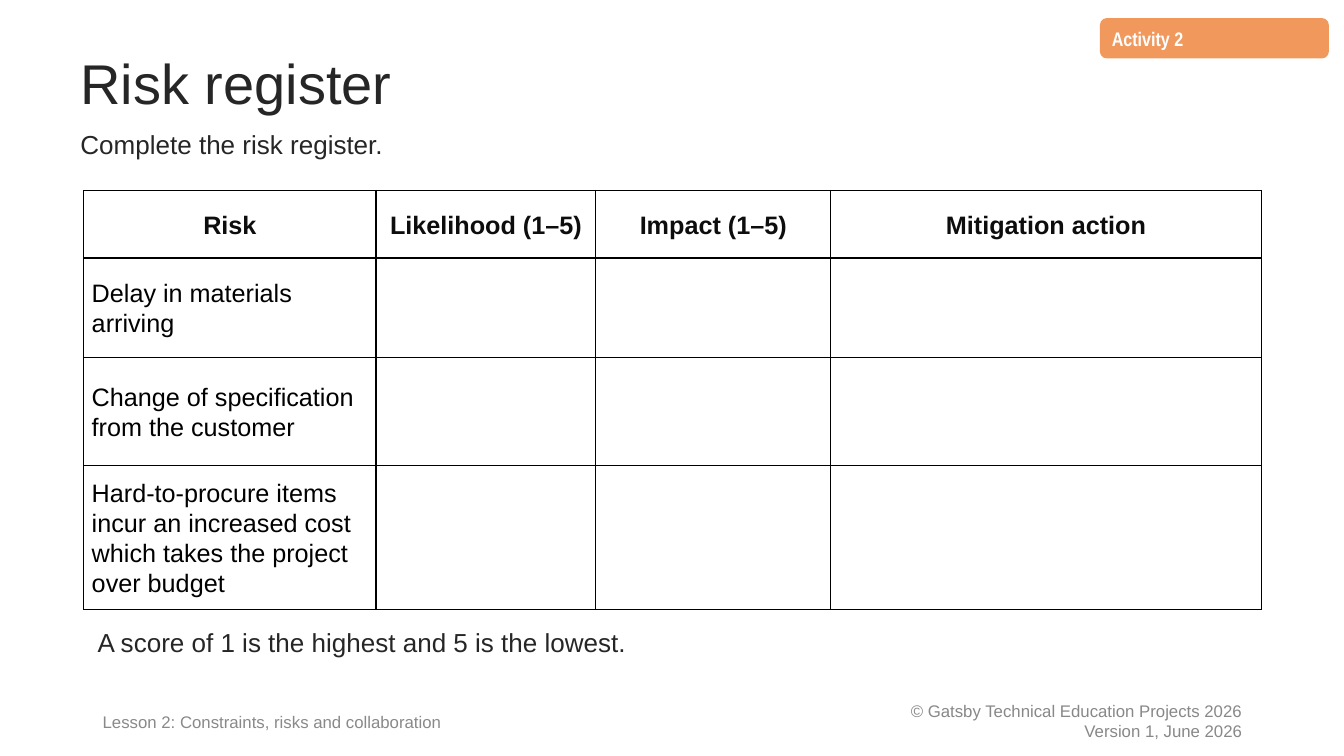
from lxml.etree import SubElement
from pptx import Presentation
from pptx.dml.color import RGBColor
from pptx.enum.shapes import MSO_SHAPE
from pptx.enum.text import MSO_ANCHOR, PP_ALIGN
from pptx.oxml.ns import qn
from pptx.util import Pt

EMU_PER_PX = 9144

WHITE = RGBColor(0xFF, 0xFF, 0xFF)
BLACK = RGBColor(0x00, 0x00, 0x00)
HEADING = RGBColor(0x0D, 0x0D, 0x0D)
INK = RGBColor(0x26, 0x26, 0x26)
COPYRIGHT_GREY = RGBColor(0x88, 0x88, 0x88)
LESSON_GREY = RGBColor(0x89, 0x89, 0x89)
ORANGE = RGBColor(0xF1, 0x99, 0x5D)

HEADINGS = ["Risk", "Likelihood (1–5)", "Impact (1–5)", "Mitigation action"]
RISKS = [
    "Delay in materials arriving",
    "Change of specification from the customer",
    "Hard-to-procure items incur an increased cost which takes the project over budget",
]
COLUMN_WIDTHS = [290, 218, 233, 427]
ROW_HEIGHTS = [67, 99, 107, 143]


def px(length):
    return length * EMU_PER_PX


def write(frame, lines, size, color, name="Arial", bold=False,
          align=PP_ALIGN.LEFT, spacing=1.0):
    frame.word_wrap = True
    for index, line in enumerate(lines):
        para = frame.add_paragraph() if index else frame.paragraphs[0]
        para.text = line
        para.alignment = align
        para.line_spacing = spacing
        para.font.name = name
        para.font.size = Pt(size)
        para.font.bold = bold
        para.font.color.rgb = color


def add_text(page, area, lines, size, color, anchor=MSO_ANCHOR.TOP, **style):
    box = page.shapes.add_textbox(*map(px, area))
    box.text_frame.vertical_anchor = anchor
    write(box.text_frame, lines, size, color, **style)


def add_badge(page, area, label):
    badge = page.shapes.add_shape(MSO_SHAPE.FLOWCHART_ALTERNATE_PROCESS, *map(px, area))
    badge.shadow.inherit = False
    badge.fill.solid()
    badge.fill.fore_color.rgb = ORANGE
    badge.line.fill.background()
    badge.text_frame.vertical_anchor = MSO_ANCHOR.TOP
    write(badge.text_frame, [label], 14, WHITE, name="Arial Narrow", bold=True, spacing=1.08)


def set_borders(cell, width):
    properties = cell._tc.get_or_add_tcPr()
    for side in ("a:lnL", "a:lnR", "a:lnT", "a:lnB"):
        line = SubElement(properties, qn(side), w=str(Pt(width)))
        fill = SubElement(line, qn("a:solidFill"))
        SubElement(fill, qn("a:srgbClr"), val=str(BLACK))


def style_cell(cell, side_margin, end_margin, border):
    cell.vertical_anchor = MSO_ANCHOR.MIDDLE
    cell.margin_left = cell.margin_right = px(side_margin)
    cell.margin_top = cell.margin_bottom = px(end_margin)
    set_borders(cell, border)
    cell.fill.background()


def add_risk_table(page, left, top):
    frame = page.shapes.add_table(
        len(ROW_HEIGHTS), len(COLUMN_WIDTHS), px(left), px(top),
        px(sum(COLUMN_WIDTHS)), px(sum(ROW_HEIGHTS)))
    table = frame.table
    table.first_row = table.horz_banding = False
    for column, width in zip(table.columns, COLUMN_WIDTHS):
        column.width = px(width)
    for row, height in zip(table.rows, ROW_HEIGHTS):
        row.height = px(height)
    for column, heading in enumerate(HEADINGS):
        cell = table.cell(0, column)
        style_cell(cell, 1, 1, 1)
        write(cell.text_frame, [heading], 18, HEADING, bold=True,
              align=PP_ALIGN.CENTER, spacing=1.07)
    for row, risk in enumerate(RISKS, 1):
        for column in range(len(HEADINGS)):
            style_cell(table.cell(row, column), 8, 0, 1 if column else 0.75)
        write(table.cell(row, 0).text_frame, [risk], 18, BLACK, spacing=1.07)


def main():
    deck = Presentation()
    deck.slide_width, deck.slide_height = px(1333), px(750)
    page = deck.slides.add_slide(deck.slide_layouts[6])
    add_text(page, (792, 695, 450, 40),
             ["© Gatsby Technical Education Projects 2026", "Version 1, June 2026"],
             12, COPYRIGHT_GREY, MSO_ANCHOR.MIDDLE, align=PP_ALIGN.RIGHT)
    add_text(page, (70, 15, 655, 106), ["Risk register"], 40, INK,
             MSO_ANCHOR.BOTTOM, spacing=0.9)
    add_text(page, (70, 127, 1190, 40), ["Complete the risk register."],
             18.6, INK, spacing=0.88)
    add_badge(page, (1091, 18, 227, 40), "Activity 2")
    add_risk_table(page, 83, 189)
    add_text(page, (87, 621, 1173, 40),
             ["A score of 1 is the highest and 5 is the lowest."],
             18.6, INK, spacing=0.88)
    add_text(page, (92, 695, 460, 40),
             ["Lesson 2: Constraints, risks and collaboration"],
             12, LESSON_GREY, MSO_ANCHOR.MIDDLE, spacing=1.08)
    deck.save("out.pptx")


if __name__ == "__main__":
    main()
